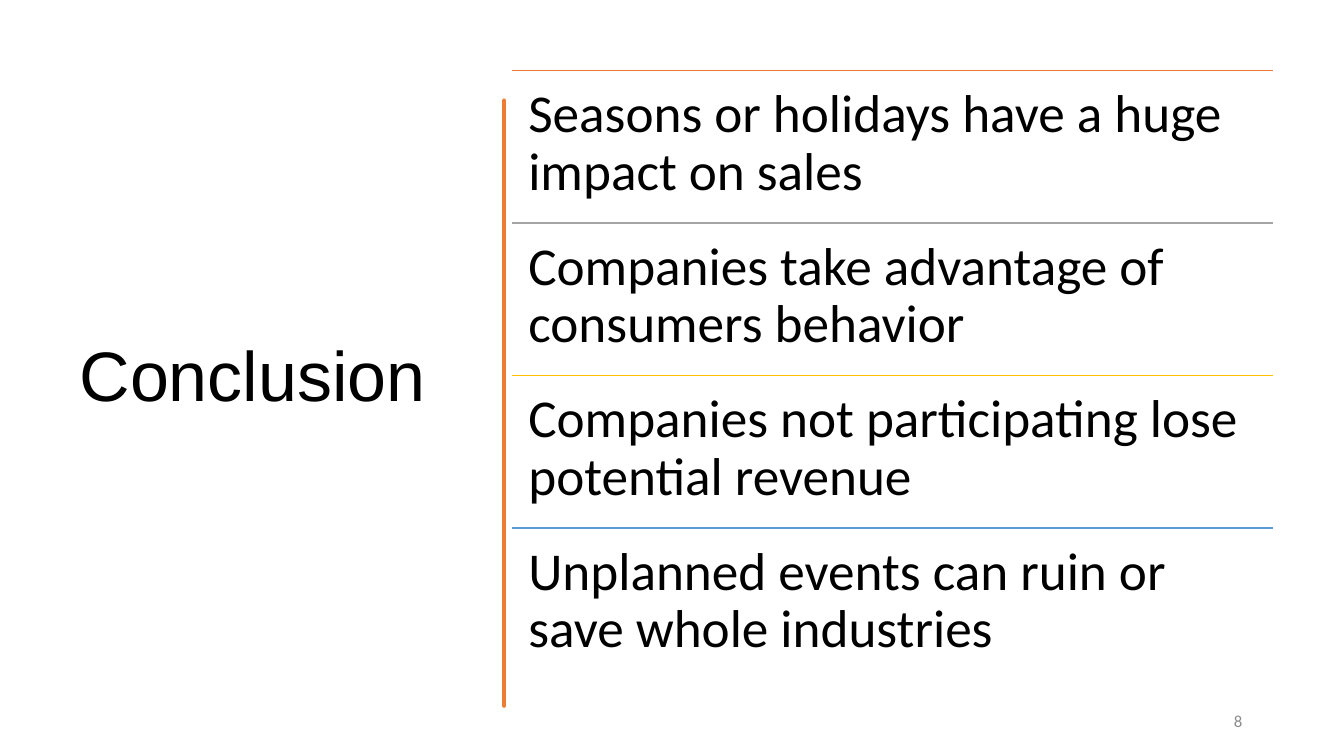
import pptx
import pptx.dml.color
import pptx.enum.shapes
import pptx.enum.text
import pptx.oxml
import pptx.oxml.ns
import pptx.util

Inches = pptx.util.Inches
ALIGN = pptx.enum.text.PP_ALIGN
ANCHOR = pptx.enum.text.MSO_ANCHOR

COLORS = {
    "text": "000000",
    "page": "8C8C8C",
    "orange": "ED7D31",
    "gray": "A5A5A5",
    "gold": "FFC000",
    "blue": "5B9BD5",
}

LIST_LEFT, LIST_TOP, LIST_WIDTH, ROW_HEIGHT = 5.08, 0.7, 7.55, 1.513
CONCLUSIONS = [
    ("orange", "Seasons or holidays have a huge impact on sales"),
    ("gray", "Companies take advantage of consumers behavior"),
    ("gold", "Companies not participating lose potential revenue"),
    ("blue", "Unplanned events can ruin or save whole industries"),
]

# Outline of the hand-drawn stroke: down the right edge, up the left edge.
STROKE_RIGHT = [
    (4.75, 0.84), (4.76, 1.1), (4.76, 1.3), (4.74, 1.72), (4.75, 2.0),
    (4.75, 2.26), (4.74, 2.6), (4.75, 2.94), (4.76, 3.35), (4.75, 3.58),
    (4.76, 4.0), (4.75, 4.36), (4.73, 4.7), (4.75, 5.1), (4.77, 5.45),
    (4.75, 5.84), (4.74, 6.2), (4.75, 6.76),
]
STROKE_LEFT = [
    (4.73, 6.76), (4.73, 6.5), (4.72, 6.35), (4.73, 6.13), (4.74, 5.8),
    (4.73, 5.57), (4.72, 5.2), (4.73, 4.77), (4.72, 4.4), (4.73, 4.15),
    (4.74, 3.8), (4.73, 3.35), (4.72, 2.9), (4.73, 2.5), (4.74, 2.1),
    (4.73, 1.81), (4.72, 1.6), (4.74, 1.2), (4.73, 0.84),
]


def rgb(name):
    return pptx.dml.color.RGBColor.from_string(COLORS[name])


def add_text(slide, box, text, size, font="Calibri", color="text",
             align=ALIGN.LEFT, anchor=ANCHOR.MIDDLE, inset=None, spacing=None):
    shape = slide.shapes.add_textbox(*map(Inches, box))
    frame = shape.text_frame
    frame.word_wrap = True
    frame.vertical_anchor = anchor
    if inset is not None:
        frame.margin_left = frame.margin_right = Inches(inset)
        frame.margin_top = frame.margin_bottom = Inches(inset)
    frame.text = text
    paragraph = frame.paragraphs[0]
    paragraph.alignment = align
    paragraph.line_spacing = spacing
    run_font = paragraph.runs[0].font
    run_font.name = font
    run_font.size = pptx.util.Pt(size)
    run_font.color.rgb = rgb(color)


def add_rule(slide, top, color):
    left, right, y = map(Inches, (LIST_LEFT, LIST_LEFT + LIST_WIDTH, top))
    rule = slide.shapes.add_connector(
        pptx.enum.shapes.MSO_CONNECTOR.STRAIGHT, left, y, right, y)
    rule.line.color.rgb = rgb(color)
    rule.line.width = pptx.util.Pt(1)
    rule._element.spPr.append(
        pptx.oxml.parse_xml(f"<a:effectLst {pptx.oxml.ns.nsdecls('a')}/>"))


def add_brush_stroke(slide):
    outline = STROKE_RIGHT + STROKE_LEFT
    builder = slide.shapes.build_freeform(*outline[0], scale=Inches(1))
    builder.add_line_segments(outline[1:], close=True)
    stroke = builder.convert_to_shape()
    stroke.shadow.inherit = False
    stroke.fill.solid()
    stroke.fill.fore_color.rgb = rgb("orange")
    stroke.line.color.rgb = rgb("orange")
    stroke.line.width = pptx.util.Pt(3.25)


def add_conclusions(slide):
    for row, (color, text) in enumerate(CONCLUSIONS):
        top = LIST_TOP + row * ROW_HEIGHT
        add_rule(slide, top, color)
        add_text(slide, (LIST_LEFT, top, LIST_WIDTH, ROW_HEIGHT), text, 38,
                 anchor=ANCHOR.TOP, inset=0.16, spacing=0.9)


def main():
    presentation = pptx.Presentation()
    presentation.slide_width = Inches(13.33)
    presentation.slide_height = Inches(7.5)
    slide = presentation.slides.add_slide(presentation.slide_layouts[6])
    add_text(slide, (0.69, 0.7, 3.74, 6.11), "Conclusion", 50,
             font="Arial", spacing=0.9)
    add_brush_stroke(slide)
    add_text(slide, (9.42, 6.95, 3, 0.4), "8", 12, color="page",
             align=ALIGN.RIGHT)
    add_conclusions(slide)
    presentation.save("out.pptx")


if __name__ == "__main__":
    main()
